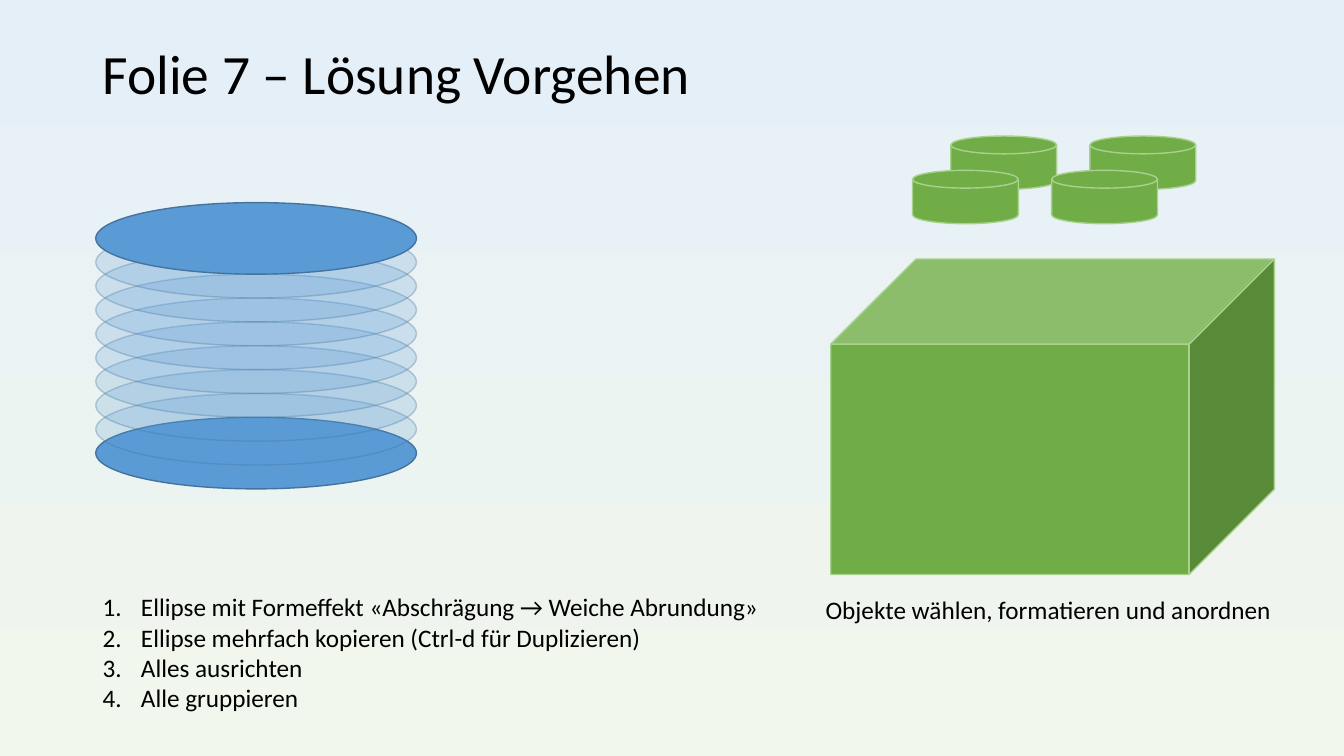
from lxml import etree
from pptx import Presentation
from pptx.dml.color import RGBColor
from pptx.enum.shapes import MSO_SHAPE
from pptx.enum.text import MSO_ANCHOR
from pptx.oxml.ns import qn
from pptx.util import Inches, Pt

OVAL = MSO_SHAPE.OVAL
CUBE = MSO_SHAPE.CUBE
DISK = MSO_SHAPE.FLOWCHART_MAGNETIC_DISK
MIDDLE = MSO_ANCHOR.MIDDLE
BLUE, NAVY = "5B9BD5", "43739E"
GREEN, LIME = "70AD47", "A9D18E"


def paint(color, code, alpha=100):
    color.rgb = RGBColor.from_string(code)
    if alpha < 100:
        fill = color._xFill
        node = etree.SubElement(fill.find(qn("a:srgbClr")), qn("a:alpha"))
        node.set("val", str(alpha * 1000))


def draw(kind, box, fill, line, clear=(100, 100)):
    shape = slide.shapes.add_shape(kind, *map(Inches, box))
    shape.shadow.inherit = False
    shape.fill.solid()
    paint(shape.fill.fore_color, fill, clear[0])
    paint(shape.line.color, line, clear[1])
    shape.line.width = Pt(1)
    return shape


deck = Presentation()
deck.slide_width = Inches(13.33)
deck.slide_height = Inches(7.5)
slide = deck.slides.add_slide(deck.slide_layouts[6])

back = slide.background.fill
back.gradient()
back.gradient_angle = 270
for stop, code in zip(back.gradient_stops, ("E5EFF8", "F1F7EC")):
    paint(stop.color, code)

for i in range(10):
    clear = (100, 100) if i in (0, 9) else (22, 33)
    top = 4.14 - i * 2.13 / 9
    draw(OVAL, (0.95, top, 3.18, 0.71), BLUE, NAVY, clear)

cube = draw(CUBE, (8.24, 2.57, 4.4, 3.13), GREEN, LIME)
cube.adjustments[0] = 0.27
for left, top in ((9.43, 1.35), (9.05, 1.69)):
    for step in (0, 1.38):
        draw(DISK, (left + step, top, 1.05, 0.53), GREEN, LIME)

steps = [
    "Ellipse mit Formeffekt «Abschrägung → Weiche Abrundung»",
    "Ellipse mehrfach kopieren (Ctrl-d für Duplizieren)",
    "Alles ausrichten",
    "Alle gruppieren",
]
texts = [
    ((0.92, 0.4, 11.5, 0.72), 39.6, ["Folie 7 – Lösung Vorgehen"]),
    ((0.92, 5.82, 6.76, 1.31), 18, steps),
    ((8.09, 5.85, 4.76, 0.4), 18, ["Objekte wählen, formatieren und anordnen"]),
]
for box, size, lines in texts:
    frame = slide.shapes.add_textbox(*map(Inches, box)).text_frame
    frame.word_wrap = True
    frame.text = "\n".join(lines)
    if size > 18:
        frame.vertical_anchor = MIDDLE
        frame.paragraphs[0].line_spacing = 0.9
    for para in frame.paragraphs:
        font = para.runs[0].font
        font.name = "Calibri"
        font.size = Pt(size)
        paint(font.color, "000000")
        if lines is steps:
            props = para._p.get_or_add_pPr()
            props.set("marL", str(Inches(0.38)))
            props.set("indent", str(-Inches(0.38)))
            mark = etree.SubElement(props, qn("a:buFont"))
            mark.set("typeface", "+mj-lt")
            mark = etree.SubElement(props, qn("a:buAutoNum"))
            mark.set("type", "arabicPeriod")

deck.save("out.pptx")
